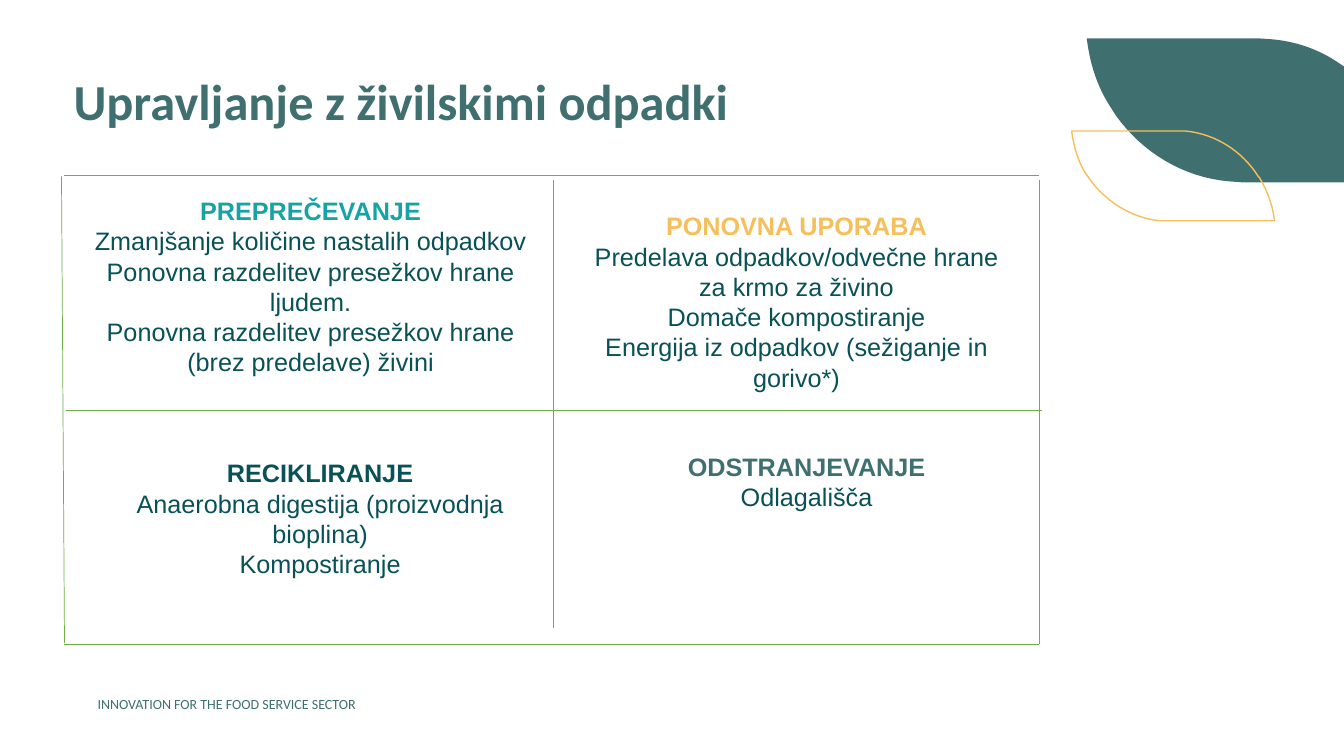
from pptx import Presentation
from pptx.dml.color import RGBColor
from pptx.enum.shapes import MSO_CONNECTOR
from pptx.enum.text import MSO_ANCHOR, MSO_AUTO_SIZE, PP_ALIGN
from pptx.oxml.ns import qn
from pptx.util import Inches, Pt
from lxml.etree import SubElement

PINE = RGBColor(0x40, 0x6F, 0x70)
DEEP_TEAL = RGBColor(0x08, 0x51, 0x56)
TEAL = RGBColor(0x17, 0xA3, 0xA5)
AMBER = RGBColor(0xF5, 0xC0, 0x5B)
GREEN = RGBColor(0x70, 0xAD, 0x47)

# Content
TITLE = "Upravljanje z živilskimi odpadki"
FOOTER = "INNOVATION FOR THE FOOD SERVICE SECTOR"

# Quadrants: heading, heading colour, (left, top, width, height), measures
QUADRANTS = [
    ("PREPREČEVANJE", TEAL, (0.72, 1.89, 4.72, 1.92), [
        "Zmanjšanje količine nastalih odpadkov",
        "Ponovna razdelitev presežkov hrane ljudem.",
        "Ponovna razdelitev presežkov hrane (brez predelave) živini"]),
    ("RECIKLIRANJE", DEEP_TEAL, (1.19, 4.49, 3.97, 1.31), [
        "Anaerobna digestija (proizvodnja bioplina)",
        "Kompostiranje"]),
    ("PONOVNA UPORABA", AMBER, (5.7, 2.04, 4.4, 1.92), [
        "Predelava odpadkov/odvečne hrane za krmo za živino",
        "Domače kompostiranje",
        "Energija iz odpadkov (sežiganje in gorivo*)"]),
    ("ODSTRANJEVANJE", PINE, (6.47, 4.43, 3.06, 0.71), [
        "Odlagališča"]),
]

# Matrix rules: x1, y1, x2, y2
LEFT, RIGHT, TOP, BOTTOM = 0.63, 10.31, 1.74, 6.39
RULES = [
    (0.61, 1.75, 0.64, 6.38),
    (5.49, 1.79, 5.49, 6.23),
    (RIGHT, 1.79, RIGHT, BOTTOM),
    (LEFT, TOP, RIGHT, TOP),
    (LEFT, BOTTOM, RIGHT, BOTTOM),
    (0.65, 4.07, 10.33, 4.07),
]

# Leaf outlines: two numbers are a corner, six are a Bézier curve
LARGE_LEAF = [
    (10.78, 0.38), (12.47, 0.38), (12.61, 0.39),
    (12.85, 0.41, 13.08, 0.49, 13.27, 0.62), (13.33, 0.66),
    (13.33, 1.81), (12.33, 1.81), (12.19, 1.8),
    (11.73, 1.76, 11.33, 1.51, 11.07, 1.15), (11, 1.04),
    (10.88, 0.85, 10.81, 0.63, 10.78, 0.39)]
SMALL_LEAF = [
    (11.68, 1.3), (10.63, 1.3), (10.63, 1.31),
    (10.65, 1.45, 10.69, 1.59, 10.76, 1.71), (10.81, 1.78),
    (10.97, 2, 11.22, 2.16, 11.5, 2.19), (11.59, 2.19),
    (12.64, 2.19), (12.64, 2.18),
    (12.62, 2.03, 12.57, 1.89, 12.49, 1.76), (12.48, 1.75),
    (12.32, 1.5, 12.06, 1.33, 11.76, 1.3)]
CURVE_STEPS = 16


def trace(outline):
    points = []
    for part in outline:
        if len(part) == 2:
            points.append(part)
            continue
        x0, y0 = points[-1]
        x1, y1, x2, y2, x3, y3 = part
        for step in range(1, CURVE_STEPS + 1):
            t = step / CURVE_STEPS
            a, b, c, d = (1 - t) ** 3, 3 * t * (1 - t) ** 2, 3 * t * t * (1 - t), t ** 3
            points.append((a * x0 + b * x1 + c * x2 + d * x3,
                           a * y0 + b * y1 + c * y2 + d * y3))
    return [(Inches(x), Inches(y)) for x, y in points]


def add_leaf(slide, outline):
    start, *rest = trace(outline)
    builder = slide.shapes.build_freeform(*start)
    builder.add_line_segments(rest, close=True)
    leaf = builder.convert_to_shape()
    leaf.shadow.inherit = False
    return leaf


def write(paragraph, text, size=18, font="Arial", color=DEEP_TEAL,
          bold=False, align=PP_ALIGN.CENTER):
    paragraph.alignment = align
    run = paragraph.add_run()
    run.text = text
    run.font.name = font
    run.font.size = Pt(size)
    run.font.bold = bold
    run.font.color.rgb = color


def add_frame(slide, box):
    frame = slide.shapes.add_textbox(*map(Inches, box)).text_frame
    frame.word_wrap = True
    return frame


def main():
    deck = Presentation()
    deck.slide_width, deck.slide_height = Inches(13.33), Inches(7.5)
    slide = deck.slides.add_slide(deck.slide_layouts[5])

    # Footer
    footer = add_frame(slide, (0.87, 6.85, 11.59, 0.27))
    write(footer.paragraphs[0], FOOTER, size=10, font="Calibri", color=PINE,
          align=PP_ALIGN.LEFT)

    # Leaves
    large_leaf = add_leaf(slide, LARGE_LEAF)
    large_leaf.fill.solid()
    large_leaf.fill.fore_color.rgb = PINE
    large_leaf.line.fill.background()
    small_leaf = add_leaf(slide, SMALL_LEAF)
    small_leaf.fill.background()
    small_leaf.line.color.rgb = AMBER
    small_leaf.line.width = Pt(1)

    # Title
    title = slide.shapes.title
    title.left, title.top, title.width, title.height = map(Inches, (0.63, 0.71, 9.69, 1.27))
    title.text_frame.vertical_anchor = MSO_ANCHOR.TOP
    title.text_frame.auto_size = MSO_AUTO_SIZE.NONE
    headline = title.text_frame.paragraphs[0]
    headline.line_spacing = 0.9
    write(headline, TITLE, size=36, font="Calibri", color=PINE, bold=True,
          align=PP_ALIGN.LEFT)

    # Quadrant texts
    for heading, color, box, measures in QUADRANTS:
        quadrant = add_frame(slide, box)
        write(quadrant.paragraphs[0], heading, color=color, bold=True)
        for measure in measures:
            write(quadrant.add_paragraph(), measure)

    # Matrix rules
    for ends in RULES:
        rule = slide.shapes.add_connector(MSO_CONNECTOR.STRAIGHT, *map(Inches, ends))
        rule.line.color.rgb = GREEN
        rule.line.width = Pt(0.5)
        SubElement(rule._element.spPr, qn("a:effectLst"))

    deck.save("out.pptx")


if __name__ == "__main__":
    main()
